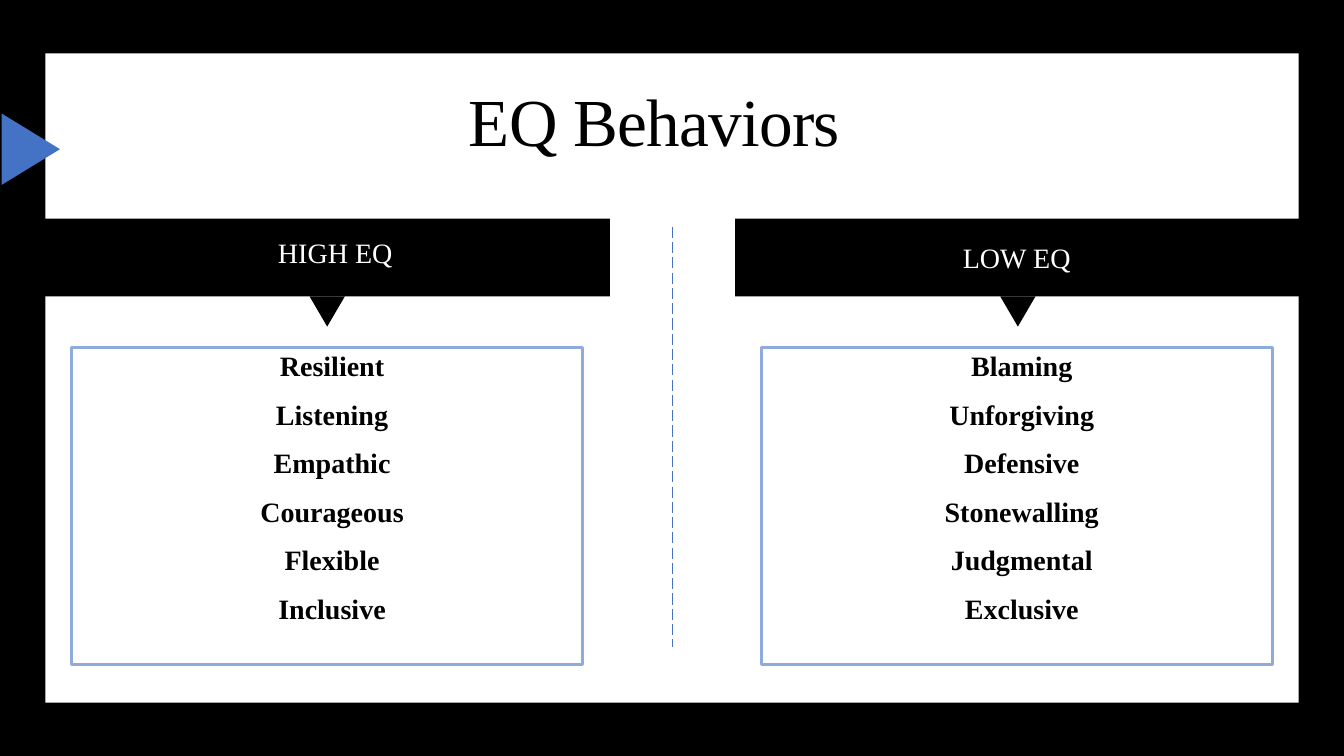
from lxml.etree import SubElement
from pptx import Presentation
from pptx.dml.color import RGBColor
from pptx.enum.dml import MSO_LINE
from pptx.enum.shapes import MSO_CONNECTOR, MSO_SHAPE
from pptx.enum.text import MSO_ANCHOR, PP_ALIGN
from pptx.oxml.ns import qn
from pptx.util import Inches, Pt

BLACK = RGBColor(0x00, 0x00, 0x00)
WHITE = RGBColor(0xFF, 0xFF, 0xFF)
BLUE = RGBColor(0x44, 0x72, 0xC4)
LIGHT_BLUE = RGBColor(0x8F, 0xAA, 0xDC)
FONT = "Times New Roman"
HIGH_EQ = ["Resilient", "Listening", "Empathic", "Courageous", "Flexible", "Inclusive"]
LOW_EQ = ["Blaming", "Unforgiving", "Defensive", "Stonewalling", "Judgmental", "Exclusive"]


def add_filled(slide, kind, box, color, rotation=0):
    """Add a borderless preset shape in one colour."""
    shape = slide.shapes.add_shape(kind, *map(Inches, box))
    shape.shadow.inherit = False
    shape.fill.solid()
    shape.fill.fore_color.rgb = color
    shape.line.fill.background()
    shape.rotation = rotation
    return shape


def add_text(slide, box, lines, size, color, bold=False):
    """Add a text box with one centred paragraph per line."""
    shape = slide.shapes.add_textbox(*map(Inches, box))
    frame = shape.text_frame
    frame.word_wrap = True
    frame.vertical_anchor = MSO_ANCHOR.MIDDLE
    frame.text = "\n".join(lines)
    for paragraph in frame.paragraphs:
        paragraph.alignment = PP_ALIGN.CENTER
        paragraph.font.name = FONT
        paragraph.font.size = Pt(size)
        paragraph.font.bold = bold
        paragraph.font.color.rgb = color
    return shape


def add_title(slide, text):
    """Add the slide title with slightly tightened letters."""
    shape = add_text(slide, (0.99, 0.74, 11.16, 1), [text], 48, BLACK)
    paragraph = shape.text_frame.paragraphs[0]
    paragraph.line_spacing = 0.9
    paragraph.runs[0].font._element.set("spc", "-50")


def add_divider(slide):
    """Add the dashed line between the two columns."""
    x = Inches(6.67)
    line = slide.shapes.add_connector(MSO_CONNECTOR.STRAIGHT, x, Inches(2.25), x, Inches(6.42))
    line.line.color.rgb = BLUE
    line.line.width = Pt(1)
    line.line.dash_style = MSO_LINE.LONG_DASH
    SubElement(line._element.spPr, qn("a:effectLst"))


def add_behavior_list(slide, left, behaviors):
    """Add the outlined box listing the behaviors."""
    shape = add_text(slide, (left, 3.45, 5.07, 3.14), behaviors, 20, BLACK, bold=True)
    shape.line.color.rgb = LIGHT_BLUE
    shape.line.width = Pt(2.25)
    frame = shape.text_frame
    frame.vertical_anchor = MSO_ANCHOR.TOP
    frame.margin_left, frame.margin_right = Inches(0.1), 0
    for paragraph in frame.paragraphs:
        paragraph.line_spacing = 0.9
        paragraph.space_after = Pt(13)


def add_column(slide, banner_left, heading, heading_box, list_left, behaviors):
    """Add a banner with its pointer, heading and behavior list."""
    add_filled(slide, MSO_SHAPE.RECTANGLE, (banner_left, 2.17, 5.61, 0.77), BLACK)
    pointer_box = (banner_left + 2.63, 2.94, 0.35, 0.3)
    add_filled(slide, MSO_SHAPE.ISOSCELES_TRIANGLE, pointer_box, BLACK, 180)
    add_text(slide, heading_box, [heading], 20, WHITE)
    add_behavior_list(slide, list_left, behaviors)


def main():
    """Build and save the slide."""
    presentation = Presentation()
    presentation.slide_width = Inches(13.33)
    presentation.slide_height = Inches(7.5)
    slide = presentation.slides.add_slide(presentation.slide_layouts[6])
    slide.background.fill.solid()
    slide.background.fill.fore_color.rgb = BLACK

    add_filled(slide, MSO_SHAPE.RECTANGLE, (0.45, 0.53, 12.43, 6.44), WHITE)
    add_filled(slide, MSO_SHAPE.ISOSCELES_TRIANGLE, (-0.05, 1.19, 0.71, 0.58), BLUE, 90)
    add_divider(slide)
    add_column(slide, 0.44, "HIGH EQ", (0.79, 2.12, 5.07, 0.77), 0.71, HIGH_EQ)
    add_column(slide, 7.29, "LOW EQ", (7.55, 2.17, 5.07, 0.77), 7.55, LOW_EQ)
    add_title(slide, "EQ Behaviors ")
    presentation.save("out.pptx")


if __name__ == "__main__":
    main()
